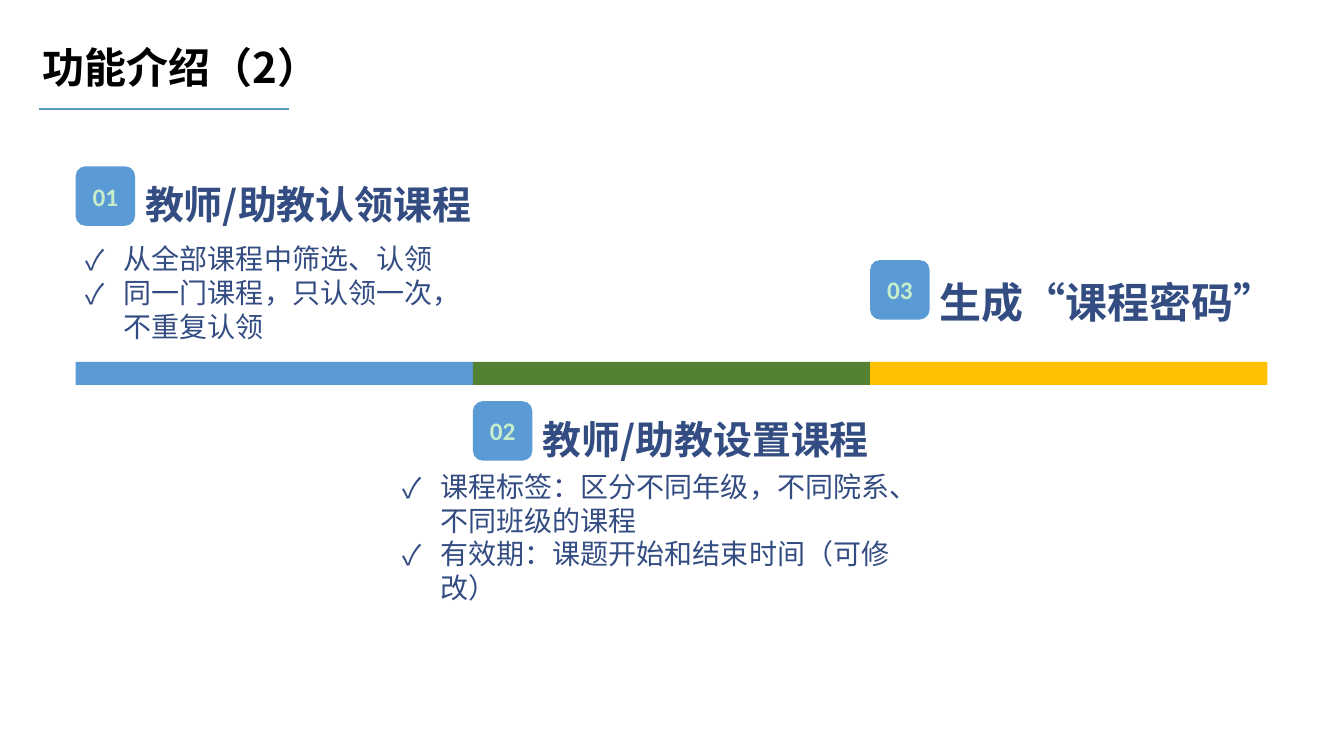
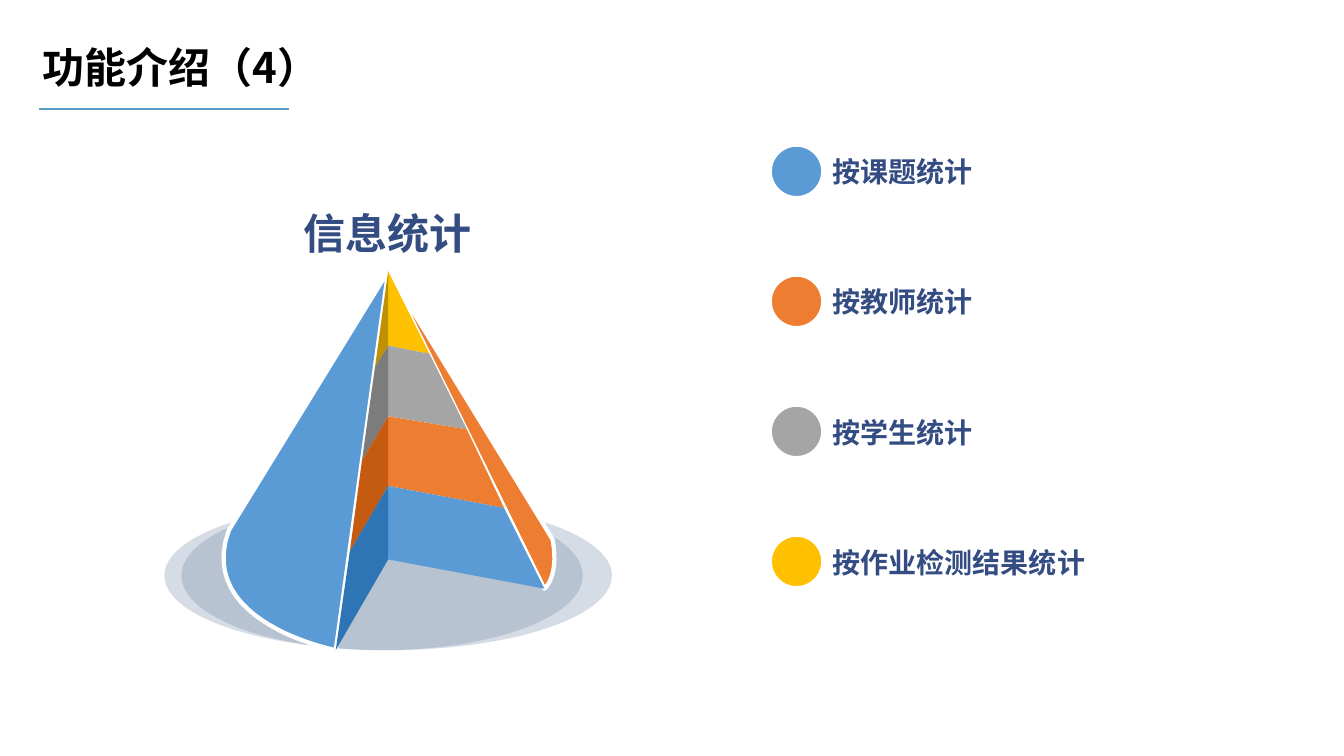
from dataclasses import dataclass

from lxml import etree
from pptx import Presentation
from pptx.dml.color import RGBColor
from pptx.enum.lang import MSO_LANGUAGE_ID
from pptx.enum.shapes import MSO_CONNECTOR, MSO_SHAPE
from pptx.enum.text import MSO_ANCHOR, MSO_AUTO_SIZE, PP_ALIGN
from pptx.oxml.ns import qn
from pptx.util import Inches, Pt

RECT, ROUND, OVAL = MSO_SHAPE.RECTANGLE, MSO_SHAPE.ROUNDED_RECTANGLE, MSO_SHAPE.OVAL
TOP, MIDDLE, BOTTOM = MSO_ANCHOR.TOP, MSO_ANCHOR.MIDDLE, MSO_ANCHOR.BOTTOM
LEFT, CENTER = PP_ALIGN.LEFT, PP_ALIGN.CENTER
STRAIGHT = MSO_CONNECTOR.STRAIGHT
GROW = MSO_AUTO_SIZE.SHAPE_TO_FIT_TEXT
CHINESE = MSO_LANGUAGE_ID.SIMPLIFIED_CHINESE


@dataclass(frozen=True)
class Theme:
    font: str = "Noto Sans CJK SC"
    number_font: str = "Calibri"
    title: str = "000000"
    rule: str = "599DC4"
    ink: str = "334C82"
    number: str = "C7EDCC"
    white: str = "FFFFFF"
    blue: str = "5B9BD5"
    orange: str = "ED7D31"
    gray: str = "A5A5A5"
    gold: str = "FFC000"
    green: str = "548235"
    dark_blue: str = "2E75B6"
    dark_orange: str = "C55A11"
    dark_gray: str = "7C7C7C"
    dark_gold: str = "BF9000"
    base_outer: str = "D6DCE5"
    base_inner: str = "ADB9CA"
    title_size: float = 30
    step_size: float = 27.8
    body_size: float = 20
    number_size: float = 18


T = Theme()


def rgb(value):
    return RGBColor.from_string(value)


def add_check(p):
    pPr = p._p.get_or_add_pPr()
    pPr.set("marL", str(Inches(0.38)))
    pPr.set("indent", str(-Inches(0.38)))
    etree.SubElement(pPr, qn("a:buFont"), typeface=T.font)
    etree.SubElement(pPr, qn("a:buChar"), char="✓")


def write(tf, text, size=T.body_size, color=T.ink, bold=True, font=T.font,
          align=LEFT, anchor=TOP, spacing=None, checks=False, wrap=True, grow=False):
    """Fill a text frame, one paragraph for each line of text."""
    tf.word_wrap = wrap
    tf.vertical_anchor = anchor
    if grow:
        tf.auto_size = GROW
    for i, line in enumerate(text.split("\n")):
        p = tf.add_paragraph() if i else tf.paragraphs[0]
        p.alignment = align
        if spacing:
            p.line_spacing = spacing
        if checks:
            add_check(p)
        r = p.add_run()
        r.text = line
        r.font.size, r.font.bold = Pt(size), bold
        r.font.color.rgb = rgb(color)
        r.font.name = font
        r.font.language_id = CHINESE
        etree.SubElement(r._r.get_or_add_rPr(), qn("a:ea"), typeface=font)


def add_text(shapes, x, y, w, h, text, **style):
    s = shapes.add_textbox(Inches(x), Inches(y), Inches(w), Inches(h))
    write(s.text_frame, text, **style)


def paint(s, fill, line_width=0, opacity=None):
    s.shadow.inherit = False
    s.fill.solid()
    s.fill.fore_color.rgb = rgb(fill)
    if opacity:
        color = s.fill._xPr.find(qn("a:solidFill"))[0]
        etree.SubElement(color, qn("a:alpha"), val=str(opacity * 1000))
    if line_width:
        s.line.color.rgb = rgb(T.white)
        s.line.width = Pt(line_width)
    else:
        s.line.fill.background()


def add_shape(shapes, kind, x, y, w, h, fill, **style):
    s = shapes.add_shape(kind, Inches(x), Inches(y), Inches(w), Inches(h))
    paint(s, fill, **style)
    return s


def add_polygon(shapes, points, fill, **style):
    points = [(Inches(x), Inches(y)) for x, y in points]
    builder = shapes.build_freeform(*points[0], scale=1.0)
    builder.add_line_segments(points[1:], close=True)
    paint(builder.convert_to_shape(), fill, **style)


def curve(a, b, c, d, steps=24):
    """Points along a cubic Bezier curve from a to d."""
    def at(t):
        u = 1 - t
        weights = u ** 3, 3 * u * u * t, 3 * u * t * t, t ** 3
        return tuple(sum(k * v for k, v in zip(weights, axis)) for axis in zip(a, b, c, d))
    return [at(i / steps) for i in range(steps + 1)]


def add_slide(prs, title):
    slide = prs.slides.add_slide(prs.slide_layouts[6])
    rule = slide.shapes.add_connector(
        STRAIGHT, Inches(0.39), Inches(1.08), Inches(2.87), Inches(1.08))
    rule.line.color.rgb = rgb(T.rule)
    rule.line.width = Pt(1)
    etree.SubElement(rule._element.spPr, qn("a:effectLst"))
    add_text(slide.shapes, 0.32, 0.36, 4.72, 0.61, title,
             size=T.title_size, color=T.title, grow=True)
    return slide


def add_step(shapes, x, y, number, heading, size=T.step_size):
    badge = add_shape(shapes, ROUND, x, y, 0.59, 0.59, T.blue)
    write(badge.text_frame, number, size=T.number_size, color=T.number,
          font=T.number_font, align=CENTER, anchor=MIDDLE)
    add_text(shapes, x + 0.59, y - 0.14, 3.73, 0.85, heading, size=size, spacing=1.5)


def add_checklist(shapes, x, y, w, text):
    add_text(shapes, x, y, w, 1.11, text, bold=False, checks=True, grow=True)


def add_pyramid(shapes):
    apex, left_foot, right_foot = (3.85, 2.69), (3.33, 6.45), (5.4, 5.84)
    add_shape(shapes, OVAL, 1.63, 4.97, 4.44, 1.48, T.base_outer)
    add_shape(shapes, OVAL, 1.8, 4.97, 3.98, 1.48, T.base_inner, opacity=71)
    for foot, bend, side, fill in ((left_foot, (1.93, 6.18), (2.27, 5.26), T.blue),
                                   (right_foot, (5.55, 5.72), (5.48, 5.35), T.orange)):
        add_polygon(shapes, [apex] + curve(foot, foot, bend, side), fill, line_width=3)

    middle = [apex] + [(apex[0], y) for y in (3.43, 4.13, 4.82, 5.55)]
    left = [apex, (3.72, 3.64), (3.59, 4.57), (3.47, 5.47), left_foot]
    right = [apex, (4.26, 3.51), (4.63, 4.26), (5, 5.04), right_foot]
    faces = ((right, (T.gold, T.gray, T.orange, T.blue)),
             (left, (T.dark_gold, T.dark_gray, T.dark_orange, T.dark_blue)))
    for edge, fills in faces:
        for i, fill in enumerate(fills):
            add_polygon(shapes, [middle[i], middle[i + 1], edge[i + 1], edge[i]], fill)


def add_legend(shapes, items):
    for i, (text, fill) in enumerate(items):
        y = 1.44 + 1.29 * i
        add_shape(shapes, OVAL, 7.64, y, 0.52, 0.52, fill, line_width=2.25)
        add_text(shapes, 8.16, y, 3.71, 0.48, text, anchor=BOTTOM)


def build_course_slide(prs):
    shapes = add_slide(prs, "功能介绍（2）").shapes
    left, width = 0.75, 3.94
    starts = [left + width * i for i in range(3)]
    for x, fill in zip(starts, (T.blue, T.green, T.gold)):
        add_shape(shapes, RECT, x, 3.59, width, 0.23, fill)
    add_step(shapes, starts[0], 1.65, "01", "教师/助教认领课程")
    add_step(shapes, starts[1], 3.98, "02", "教师/助教设置课程")
    add_step(shapes, starts[2], 2.58, "03", "生成“课程密码”", size=T.title_size)
    add_checklist(shapes, left, 2.35, width,
                  "从全部课程中筛选、认领\n同一门课程，只认领一次，不重复认领")
    add_checklist(shapes, 3.89, 4.61, 5.52,
                  "课程标签：区分不同年级，不同院系、不同班级的课程\n"
                  "有效期：课题开始和结束时间（可修改）")


def build_statistics_slide(prs):
    shapes = add_slide(prs, "功能介绍（4）").shapes
    add_pyramid(shapes.add_group_shape().shapes)
    add_legend(shapes.add_group_shape().shapes,
               (("按课题统计", T.blue), ("按教师统计", T.orange),
                ("按学生统计", T.gray), ("按作业检测结果统计", T.gold)))
    add_text(shapes, 2.91, 2.01, 1.88, 0.61, "信息统计",
             size=T.title_size, wrap=False, grow=True)


def main():
    prs = Presentation()
    prs.slide_width, prs.slide_height = Inches(13.33), Inches(7.5)
    build_course_slide(prs)
    build_statistics_slide(prs)
    prs.save("out.pptx")


if __name__ == "__main__":
    main()
